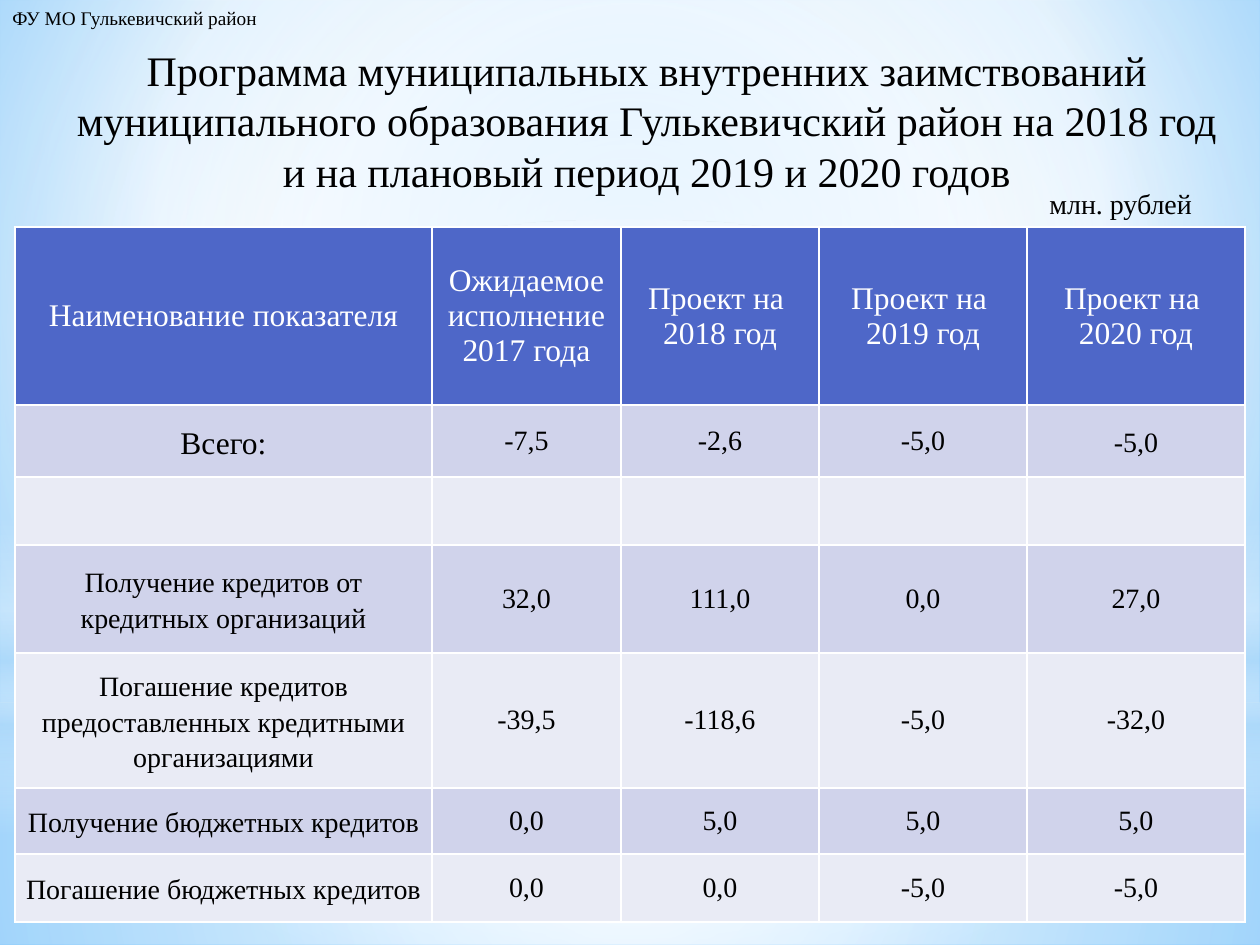
from dataclasses import dataclass

from pptx import Presentation
from pptx.dml.color import RGBColor
from pptx.enum.shapes import MSO_SHAPE as Shape
from pptx.enum.text import MSO_ANCHOR as Anchor, MSO_AUTO_SIZE as AutoSize, PP_ALIGN as Align
from pptx.oxml import parse_xml
from pptx.oxml.ns import nsdecls, qn
from pptx.util import Pt

EMU_PER_PX = 914400 / 126


def px(length):
    return round(length * EMU_PER_PX)


@dataclass(frozen=True)
class Theme:
    font: str = "Times New Roman"
    text: str = "000000"
    white: str = "FFFFFF"
    haze: str = "B4DCFA"
    sky_edge: str = "5BB9FF"
    sky_core: str = "9ED5FF"
    header: str = "4E67C8"
    bands: tuple = ("D0D3EB", "E9EBF5")
    title_size: int = 24
    head_size: int = 18
    body_size: int = 16
    note_size: int = 11


def gradient_xml(stops, focus=None):
    """Circular gradient around focus (l, t, r, b percent), or a vertical one."""
    marks = "".join(
        f'<a:gs pos="{pos * 1000}"><a:srgbClr val="{color}">'
        f'<a:alpha val="{opacity * 1000}"/></a:srgbClr></a:gs>'
        for pos, color, opacity in stops)
    if focus:
        sides = " ".join(f'{side}="{value * 1000}"' for side, value in zip("ltrb", focus))
        course = f'<a:path path="circle"><a:fillToRect {sides}/></a:path>'
    else:
        course = '<a:lin ang="5400000" scaled="0"/>'
    return parse_xml(f'<a:gradFill {nsdecls("a")} rotWithShape="1">'
                     f'<a:gsLst>{marks}</a:gsLst>{course}</a:gradFill>')


class SlideBuilder:
    def __init__(self, theme, slide):
        self.theme = theme
        self.slide = slide
        self.backdrop_count = 0

    def gradient(self, fill, holder, stops, focus):
        fill.solid()
        holder.replace(holder.find(qn("a:solidFill")), gradient_xml(stops, focus))

    def background(self, stops, focus):
        fill = self.slide.background.fill
        fill.solid()
        holder = self.slide.element.find(".//" + qn("p:bgPr"))
        self.gradient(fill, holder, stops, focus)

    def backdrop(self, kind, top, height, stops, focus=None):
        glow = self.slide.shapes.add_shape(kind, 0, px(top), px(1260), px(height))
        glow.shadow.inherit = False
        glow.line.fill.background()
        self.gradient(glow.fill, glow.element.spPr, stops, focus)
        # Backdrops lie below everything else
        self.slide.shapes.element.insert(2 + self.backdrop_count, glow.element)
        self.backdrop_count += 1

    def set_text(self, frame, text, size, color, align):
        frame.text = text
        for paragraph in frame.paragraphs:
            paragraph.alignment = align
            for run in paragraph.runs:
                run.font.name = self.theme.font
                run.font.size = Pt(size)
                run.font.color.rgb = RGBColor.from_string(color)

    def title(self, box, text):
        title = self.slide.shapes.title
        title.left, title.top, title.width, title.height = map(px, box)
        frame = title.text_frame
        self.set_text(frame, text, self.theme.title_size, self.theme.text, Align.CENTER)
        frame.word_wrap = False
        frame.auto_size = AutoSize.SHAPE_TO_FIT_TEXT
        frame.vertical_anchor = Anchor.TOP

    def label(self, box, text, size, wrap):
        frame = self.slide.shapes.add_textbox(*map(px, box)).text_frame
        self.set_text(frame, text, size, self.theme.text, Align.LEFT)
        frame.word_wrap = wrap
        frame.auto_size = AutoSize.SHAPE_TO_FIT_TEXT

    def cell(self, cell, text, size, color, fill, margins, spaced):
        cell.fill.solid()
        cell.fill.fore_color.rgb = RGBColor.from_string(fill)
        cell.vertical_anchor = Anchor.MIDDLE
        cell.margin_left = cell.margin_right = px(margins[0])
        cell.margin_top = cell.margin_bottom = px(margins[1])
        if text:
            self.set_text(cell.text_frame, text, size, color, Align.CENTER)
        if spaced:
            paragraph = cell.text_frame.paragraphs[0]
            paragraph.line_spacing = 1.15
            paragraph.space_after = Pt(10)
        for place, side in enumerate("LRTB"):
            cell._tc.get_or_add_tcPr().insert(place, parse_xml(
                f'<a:ln{side} {nsdecls("a")} w="12700"><a:solidFill>'
                f'<a:srgbClr val="{self.theme.white}"/></a:solidFill></a:ln{side}>'))

    def table(self, left, top, widths, heights, rows):
        theme = self.theme
        table = self.slide.shapes.add_table(
            len(heights), len(widths), px(left), px(top),
            px(sum(widths)), px(sum(heights))).table
        for column, width in zip(table.columns, widths):
            column.width = px(width)
        for row, height in zip(table.rows, heights):
            row.height = px(height)
        for r, texts in enumerate(rows):
            for c, text in enumerate(texts):
                cell = table.cell(r, c)
                if r == 0:
                    self.cell(cell, text, theme.head_size, theme.white,
                              theme.header, (6, 6), False)
                else:
                    is_total = (r, c) == (1, 0)
                    size = theme.head_size if is_total else theme.body_size
                    spaced = bool(text) and (c == 0 or (r, c) == (1, 4))
                    self.cell(cell, text, size, theme.text,
                              theme.bands[(r - 1) % 2], (9, 0), spaced)


def main():
    theme = Theme()
    deck = Presentation()
    deck.slide_width, deck.slide_height = px(1260), px(945)
    builder = SlideBuilder(theme, deck.slides.add_slide(deck.slide_layouts[5]))
    white, haze = theme.white, theme.haze
    center = (50, 50, 50, 50)

    # Sky background with soft glows
    builder.background([(0, theme.sky_core, 100), (60, white, 100),
                        (100, theme.sky_edge, 100)], (20, 10, 20, 60))
    builder.backdrop(Shape.RECTANGLE, 703, 242,
                     [(0, white, 91), (37, white, 76), (100, haze, 79)], center)
    builder.backdrop(Shape.RECTANGLE, 0, 703,
                     [(0, white, 89), (48, white, 62), (100, haze, 79)], center)
    builder.backdrop(Shape.RECTANGLE, 519, 315,
                     [(0, white, 0), (29, white, 30), (45, haze, 40),
                      (55, white, 26), (65, haze, 60), (100, white, 0)])
    builder.backdrop(Shape.OVAL, 220, 703, [(0, white, 100), (56, white, 0)], center)

    # Borrowing programme figures
    years = [f"Проект на \n{year} год" for year in (2018, 2019, 2020)]
    builder.table(15, 227, (417, 189, 198, 208, 218), (178, 72, 68, 108, 135, 66, 68), [
        ["Наименование показателя", "Ожидаемое исполнение\n2017 года", *years],
        ["Всего:", "-7,5", "-2,6", "-5,0", "-5,0"],
        [""] * 5,
        ["Получение кредитов от кредитных организаций", "32,0", "111,0", "0,0", "27,0"],
        ["Погашение кредитов предоставленных кредитными организациями",
         "-39,5", "-118,6", "-5,0", "-32,0"],
        ["Получение бюджетных кредитов", "0,0", "5,0", "5,0", "5,0"],
        ["Погашение бюджетных кредитов", "0,0", "0,0", "-5,0", "-5,0"],
    ])

    # Heading, owner and unit
    builder.title((58, 38, 1188, 165),
                  "Программа муниципальных внутренних заимствований \n"
                  "муниципального образования Гулькевичский район на 2018 год \n"
                  "и на плановый период 2019 и 2020 годов ")
    builder.label((0, 0, 275, 37), "ФУ МО Гулькевичский район", theme.note_size, False)
    builder.label((1037, 180, 208, 47), "млн. рублей", theme.body_size, True)

    deck.save("out.pptx")


if __name__ == "__main__":
    main()
